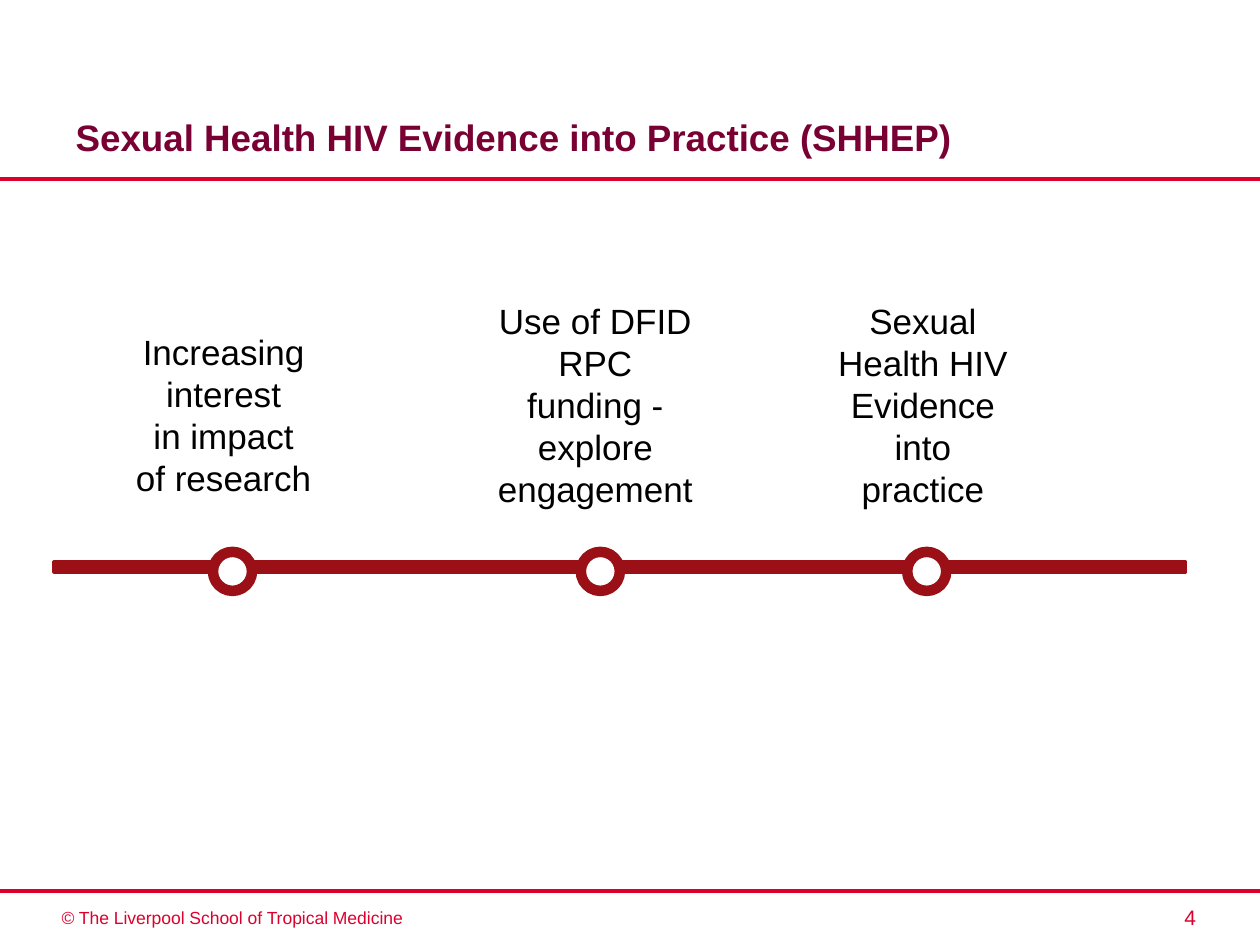
from pptx import Presentation
from pptx.dml.color import RGBColor
from pptx.enum.shapes import MSO_CONNECTOR, MSO_SHAPE
from pptx.enum.text import MSO_ANCHOR, PP_ALIGN
from pptx.oxml.ns import qn
from pptx.util import Inches, Pt
from lxml.etree import SubElement

PLUM = RGBColor(0x79, 0x00, 0x33)
CRIMSON = RGBColor(0xDC, 0x00, 0x2E)
DARK_RED = RGBColor(0x9B, 0x0F, 0x16)
BLACK = RGBColor(0, 0, 0)
WHITE = RGBColor(0xFF, 0xFF, 0xFF)

SLIDE_WIDTH, SLIDE_HEIGHT = 10, 7.5
MARKER_TOP, MARKER_SIZE = 4.38, 0.31

# marker left, label box (left, top, width, height), label paragraphs
MILESTONES = [
    (1.69, (0.83, 2.57, 1.89, 1.45),
     ["Increasing interest", "in impact", "of research"]),
    (4.61, (3.82, 2.33, 1.81, 1.78),
     ["Use of DFID RPC", "funding - explore engagement"]),
    (7.2, (6.5, 2.33, 1.65, 1.78),
     ["Sexual Health HIV Evidence into practice"]),
]


class SlideBuilder:
    """Holds the font and the slide being built; lengths are in inches."""

    def __init__(self, slide, font="Arial"):
        self.slide = slide
        self.font = font

    def add_paragraphs(self, frame, paragraphs, size, color, align, bold=False):
        frame.word_wrap = True
        for index, wording in enumerate(paragraphs):
            paragraph = frame.paragraphs[0] if index == 0 else frame.add_paragraph()
            paragraph.alignment = align
            run = paragraph.add_run()
            run.text = wording
            run.font.name = self.font
            run.font.size = Pt(size)
            run.font.bold = bold
            run.font.color.rgb = color

    def title(self, wording, box):
        heading = self.slide.shapes.title
        heading.left, heading.top, heading.width, heading.height = map(Inches, box)
        heading.text_frame.vertical_anchor = MSO_ANCHOR.BOTTOM
        self.add_paragraphs(heading.text_frame, [wording], 21, PLUM,
                            PP_ALIGN.LEFT, bold=True)

    def text(self, paragraphs, box, size, color, align=PP_ALIGN.LEFT):
        label = self.slide.shapes.add_textbox(*map(Inches, box))
        self.add_paragraphs(label.text_frame, paragraphs, size, color, align)

    def rule(self, y):
        """Draw a horizontal line across the whole slide."""
        line = self.slide.shapes.add_connector(
            MSO_CONNECTOR.STRAIGHT, 0, Inches(y), Inches(SLIDE_WIDTH), Inches(y))
        line.line.color.rgb = CRIMSON
        line.line.width = Pt(2.25)
        SubElement(line._element.spPr, qn("a:effectLst"))

    def shape(self, preset, box, fill, line_width):
        shape = self.slide.shapes.add_shape(preset, *map(Inches, box))
        shape.shadow.inherit = False
        shape.fill.solid()
        shape.fill.fore_color.rgb = fill
        shape.line.color.rgb = DARK_RED
        shape.line.width = Pt(line_width)


def main():
    deck = Presentation()
    deck.slide_width = Inches(SLIDE_WIDTH)
    deck.slide_height = Inches(SLIDE_HEIGHT)
    builder = SlideBuilder(deck.slides.add_slide(deck.slide_layouts[5]))

    builder.title("Sexual Health HIV Evidence into Practice (SHHEP)",
                  (0.5, 0.3, 9, 1.01))
    for y in (1.42, 7.07):
        builder.rule(y)
    builder.text(["© The Liverpool School of Tropical Medicine"],
                 (0.39, 7.15, 3.95, 0.27), 10, CRIMSON)
    builder.text(["4"], (7.76, 7.13, 1.83, 0.3), 12, CRIMSON, PP_ALIGN.RIGHT)

    builder.shape(MSO_SHAPE.RECTANGLE, (0.43, 4.46, 8.98, 0.08), DARK_RED, 2)
    for marker_left, label_box, paragraphs in MILESTONES:
        builder.shape(MSO_SHAPE.FLOWCHART_CONNECTOR,
                      (marker_left, MARKER_TOP, MARKER_SIZE, MARKER_SIZE), WHITE, 6)
        builder.text(paragraphs, label_box, 20, BLACK, PP_ALIGN.CENTER)

    deck.save("out.pptx")


if __name__ == "__main__":
    main()
